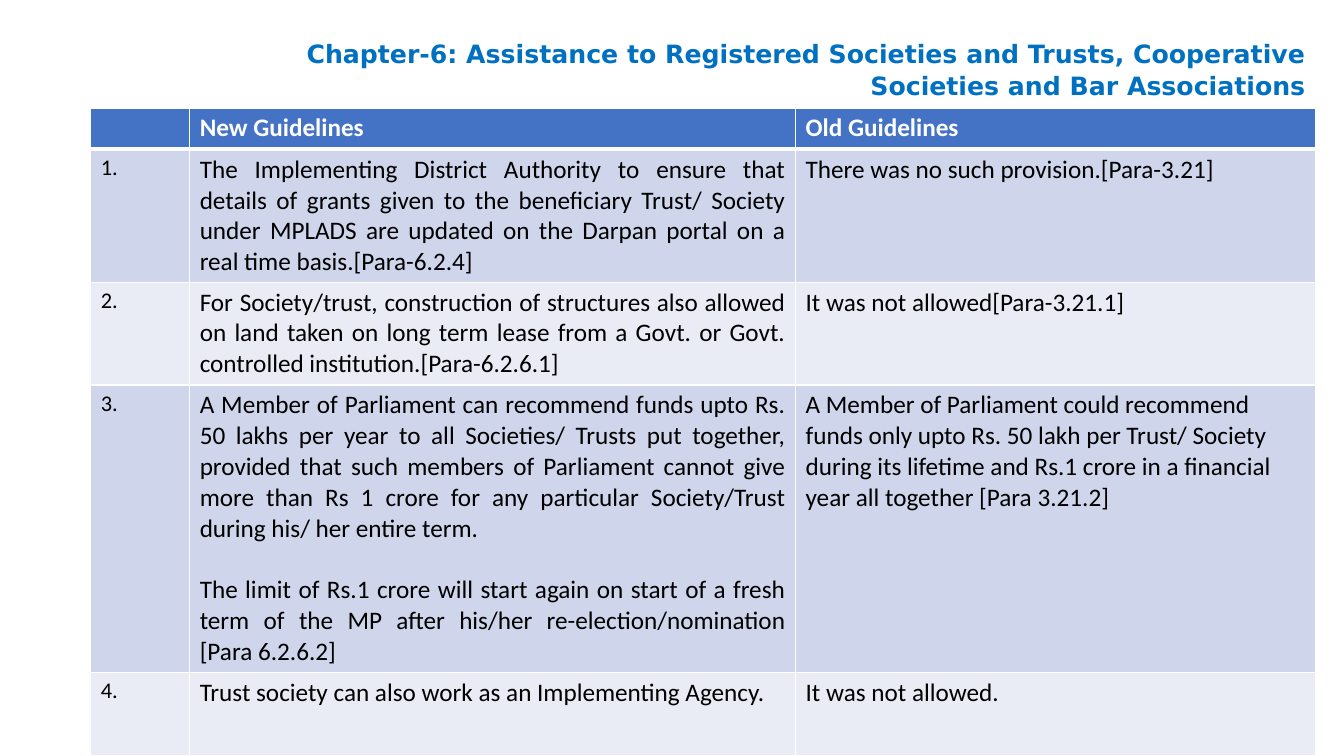
from lxml.etree import SubElement
from pptx import Presentation
from pptx.dml.color import RGBColor
from pptx.enum.text import MSO_AUTO_SIZE, PP_ALIGN
from pptx.oxml.ns import qn
from pptx.util import Cm, Pt

TITLE = "Chapter-6: Assistance to Registered Societies and Trusts, Cooperative Societies and Bar Associations"
HEADERS = ["", "New Guidelines", "Old Guidelines"]
GUIDELINES = [
    (["The Implementing District Authority to ensure that details of grants given to the beneficiary Trust/ Society under MPLADS are updated on the Darpan portal on a real time basis.[Para-6.2.4]"],
     "There was no such provision.[Para-3.21]"),
    (["For Society/trust, construction of structures also allowed on land taken on long term lease from a Govt. or Govt. controlled institution.[Para-6.2.6.1]"],
     "It was not allowed[Para-3.21.1]"),
    (["A Member of Parliament can recommend funds upto Rs. 50 lakhs per year to all Societies/ Trusts put together, provided that such members of Parliament cannot give more than Rs 1 crore for any particular Society/Trust during his/ her entire term.",
      "The limit of Rs.1 crore will start again on start of a fresh term of the MP after his/her re-election/nomination [Para 6.2.6.2]"],
     "A Member of Parliament could recommend funds only upto Rs. 50 lakh per Trust/ Society during its lifetime and Rs.1 crore in a financial year all together [Para 3.21.2]"),
    (["Trust society can also work as an Implementing Agency."],
     "It was not allowed."),
]
COLORS = {"title": "0070C0", "header": "4472C4", "odd": "CFD5EA",
          "even": "E9EBF5", "white": "FFFFFF", "black": "000000"}
COLUMN_WIDTHS = [2.49, 15.27, 13.1]
ROW_HEIGHTS = [1.04, 3.35, 2.59, 7.24, 2.09]


def write_text(frame, paragraphs, size=18, color="black", bold=False, font="Calibri",
               align=PP_ALIGN.LEFT, gap=0, after=0, spacing=1.0):
    frame.word_wrap = True
    for index, text in enumerate(paragraphs):
        paragraph = frame.add_paragraph() if index else frame.paragraphs[0]
        paragraph.alignment = align
        paragraph.line_spacing = spacing
        paragraph.space_after = Pt(gap if index < len(paragraphs) - 1 else after)
        run = paragraph.add_run()
        run.text = text
        run.font.size = Pt(size)
        run.font.name = font
        run.font.bold = bold
        run.font.color.rgb = RGBColor.from_string(COLORS[color])


def style_cell(cell, fill, top=1, bottom=1):
    properties = cell._tc.get_or_add_tcPr()
    for side, width in (("L", 1), ("R", 1), ("T", top), ("B", bottom)):
        line = SubElement(properties, qn(f"a:ln{side}"), w=str(Pt(width)))
        SubElement(SubElement(line, qn("a:solidFill")), qn("a:srgbClr"), val=COLORS["white"])
    cell.fill.solid()
    cell.fill.fore_color.rgb = RGBColor.from_string(COLORS[fill])


def add_title(slide):
    box = slide.shapes.add_textbox(Cm(4.98), Cm(0.79), Cm(28.17), Cm(1.8))
    box.text_frame.auto_size = MSO_AUTO_SIZE.SHAPE_TO_FIT_TEXT
    write_text(box.text_frame, [TITLE], color="title", bold=True, font="DejaVu Sans",
               align=PP_ALIGN.RIGHT, after=8, spacing=1.07)


def add_guidelines(slide):
    table = slide.shapes.add_table(
        len(ROW_HEIGHTS), len(COLUMN_WIDTHS), Cm(2.29), Cm(2.72),
        Cm(sum(COLUMN_WIDTHS)), Cm(sum(ROW_HEIGHTS))).table
    for column, width in zip(table.columns, COLUMN_WIDTHS):
        column.width = Cm(width)
    for row, height in zip(table.rows, ROW_HEIGHTS):
        row.height = Cm(height)

    for column, header in enumerate(HEADERS):
        cell = table.cell(0, column)
        style_cell(cell, "header", bottom=3)
        if header:
            write_text(cell.text_frame, [header], color="white", bold=True)

    for number, (new, old) in enumerate(GUIDELINES, start=1):
        cells = table.rows[number].cells
        for cell in cells:
            style_cell(cell, "odd" if number % 2 else "even", top=3 if number == 1 else 1)
        new_align = PP_ALIGN.LEFT if number == len(GUIDELINES) else PP_ALIGN.JUSTIFY
        write_text(cells[0].text_frame, [f"{number}."], size=16)
        write_text(cells[1].text_frame, new, align=new_align, gap=22)
        write_text(cells[2].text_frame, [old], after=8 if number <= 2 else 0)


def main():
    presentation = Presentation()
    presentation.slide_width = Cm(33.87)
    presentation.slide_height = Cm(19.05)
    slide = presentation.slides.add_slide(presentation.slide_layouts[6])
    add_title(slide)
    add_guidelines(slide)
    presentation.save("out.pptx")


if __name__ == "__main__":
    main()
